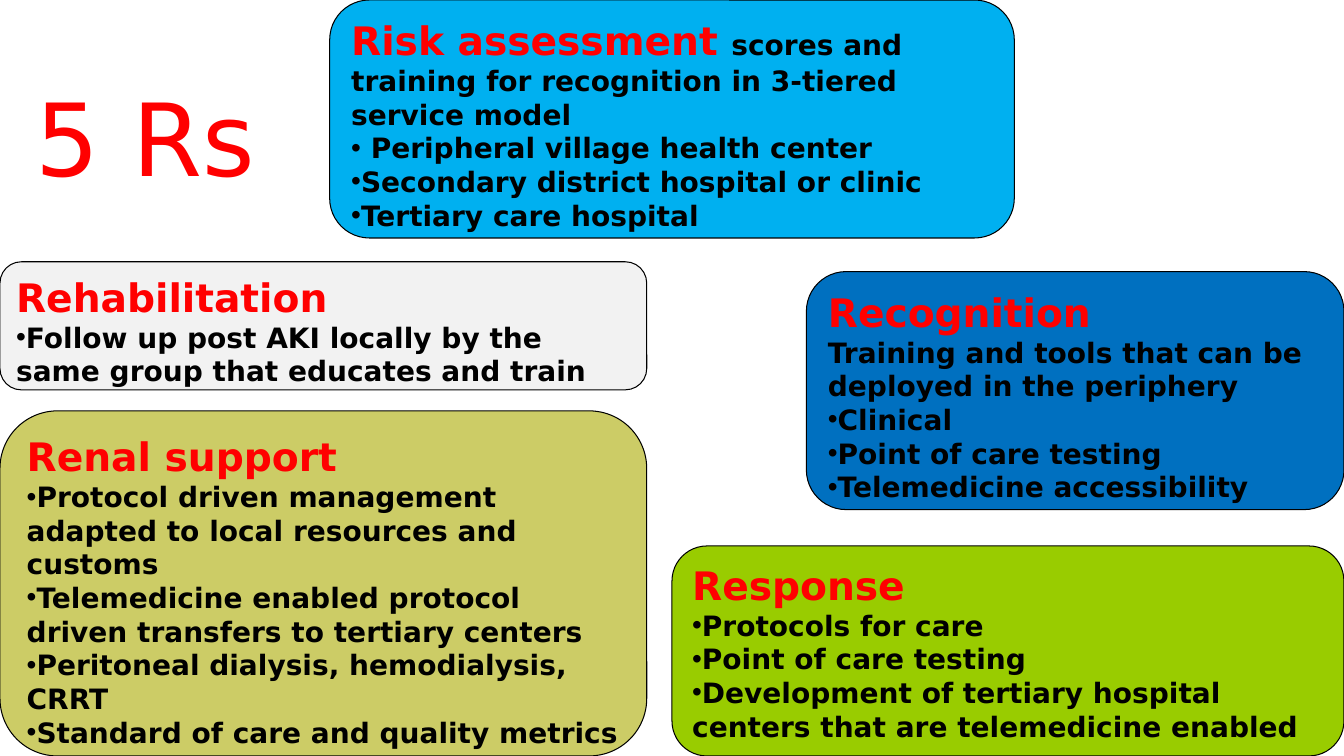
import pptx
import pptx.util
import pptx.dml.color
import pptx.enum.shapes
import pptx.enum.text
import pptx.oxml.ns
from dataclasses import dataclass
from lxml import etree

Pt = pptx.util.Pt
RGB = pptx.dml.color.RGBColor


@dataclass(frozen=True)
class Theme:
    font: str = "DejaVu Sans"
    bullet_font: str = "Arial"
    accent: str = "FF0000"
    ink: str = "000000"
    sky: str = "00B0F0"
    blue: str = "0070C0"
    green: str = "99CC00"
    khaki: str = "CCCC66"
    grey: str = "F2F2F2"
    title_size: float = 72
    heading_size: float = 28
    body_size: float = 20
    outline: float = 0.75


@dataclass(frozen=True)
class Card:
    box: tuple[float, float, float, float]  # left, top, width, height in points
    fill: str
    heading: str
    bullets: tuple[str, ...]
    tail: str = ""  # body text on the heading line
    intro: str = ""  # plain paragraph under the heading


THEME = Theme()

CARDS = (
    Card((576, 194, 384, 170), THEME.blue, "Recognition",
         ("Clinical", "Point of care testing", "Telemedicine accessibility"),
         intro="Training and tools that can be deployed in the periphery"),
    Card((480, 390, 480, 150), THEME.green, "Response",
         ("Protocols for care", "Point of care testing",
          "Development of tertiary hospital centers that are telemedicine enabled")),
    Card((0, 293.5, 462, 246.5), THEME.khaki, "Renal support",
         ("Protocol driven management adapted to local resources and customs",
          "Telemedicine enabled protocol driven transfers to tertiary centers",
          "Peritoneal dialysis, hemodialysis, CRRT",
          "Standard of care and quality metrics")),
    Card((0, 187, 462, 91.5), THEME.grey, "Rehabilitation",
         ("Follow up post AKI locally by the same group that educates and train",)),
    Card((235.5, 0, 489, 170), THEME.sky, "Risk assessment ",
         (" Peripheral village health center",
          "Secondary district hospital or clinic", "Tertiary care hospital"),
         tail="scores and training for recognition in 3-tiered service model"),
)


def style_run(r, size: float, color: str, bold: bool = True) -> None:
    r.font.name = THEME.font
    r.font.size = Pt(size)
    r.font.bold = bold
    r.font.color.rgb = RGB.from_string(color)


def add_bullet(p) -> None:
    qn = pptx.oxml.ns.qn
    pPr = p._p.get_or_add_pPr()
    pPr.set("marL", "0")
    pPr.set("indent", "0")
    etree.SubElement(pPr, qn("a:buFont")).set("typeface", THEME.bullet_font)
    etree.SubElement(pPr, qn("a:buChar")).set("char", "•")


def add_body(tf, text: str, bulleted: bool) -> None:
    p = tf.add_paragraph()
    p.text = text
    p.alignment = pptx.enum.text.PP_ALIGN.LEFT
    style_run(p.runs[0], THEME.body_size, THEME.ink)
    if bulleted:
        add_bullet(p)


def draw_card(s, card: Card) -> None:
    sp = s.shapes.add_shape(pptx.enum.shapes.MSO_SHAPE.ROUNDED_RECTANGLE,
                            *map(Pt, card.box))
    sp.shadow.inherit = False
    sp.fill.solid()
    sp.fill.fore_color.rgb = RGB.from_string(card.fill)
    sp.line.color.rgb = RGB.from_string(THEME.ink)
    sp.line.width = Pt(THEME.outline)

    # Heading line
    tf = sp.text_frame
    tf.word_wrap = True
    tf.vertical_anchor = pptx.enum.text.MSO_ANCHOR.TOP
    tf.text = card.heading
    p = tf.paragraphs[0]
    p.alignment = pptx.enum.text.PP_ALIGN.LEFT
    style_run(p.runs[0], THEME.heading_size, THEME.accent)
    if card.tail:
        r = p.add_run()
        r.text = card.tail
        style_run(r, THEME.body_size, THEME.ink)

    # Body
    if card.intro:
        add_body(tf, card.intro, bulleted=False)
    for text in card.bullets:
        add_body(tf, text, bulleted=True)


def draw_title(s, text: str) -> None:
    sp = s.shapes.title
    sp.left, sp.top, sp.width, sp.height = map(Pt, (18.5, 50.5, 206, 94.5))
    tf = sp.text_frame
    tf.text = text
    tf.word_wrap = True
    tf.auto_size = pptx.enum.text.MSO_AUTO_SIZE.SHAPE_TO_FIT_TEXT
    tf.vertical_anchor = pptx.enum.text.MSO_ANCHOR.TOP
    p = tf.paragraphs[0]
    p.alignment = pptx.enum.text.PP_ALIGN.LEFT
    style_run(p.runs[0], THEME.title_size, THEME.accent, bold=False)


def main() -> None:
    prs = pptx.Presentation()
    prs.slide_width, prs.slide_height = Pt(960), Pt(540)
    s = prs.slides.add_slide(prs.slide_layouts.get_by_name("Title Only"))
    draw_title(s, "5 Rs")
    for card in CARDS:
        draw_card(s, card)
    prs.save("out.pptx")


if __name__ == "__main__":
    main()
